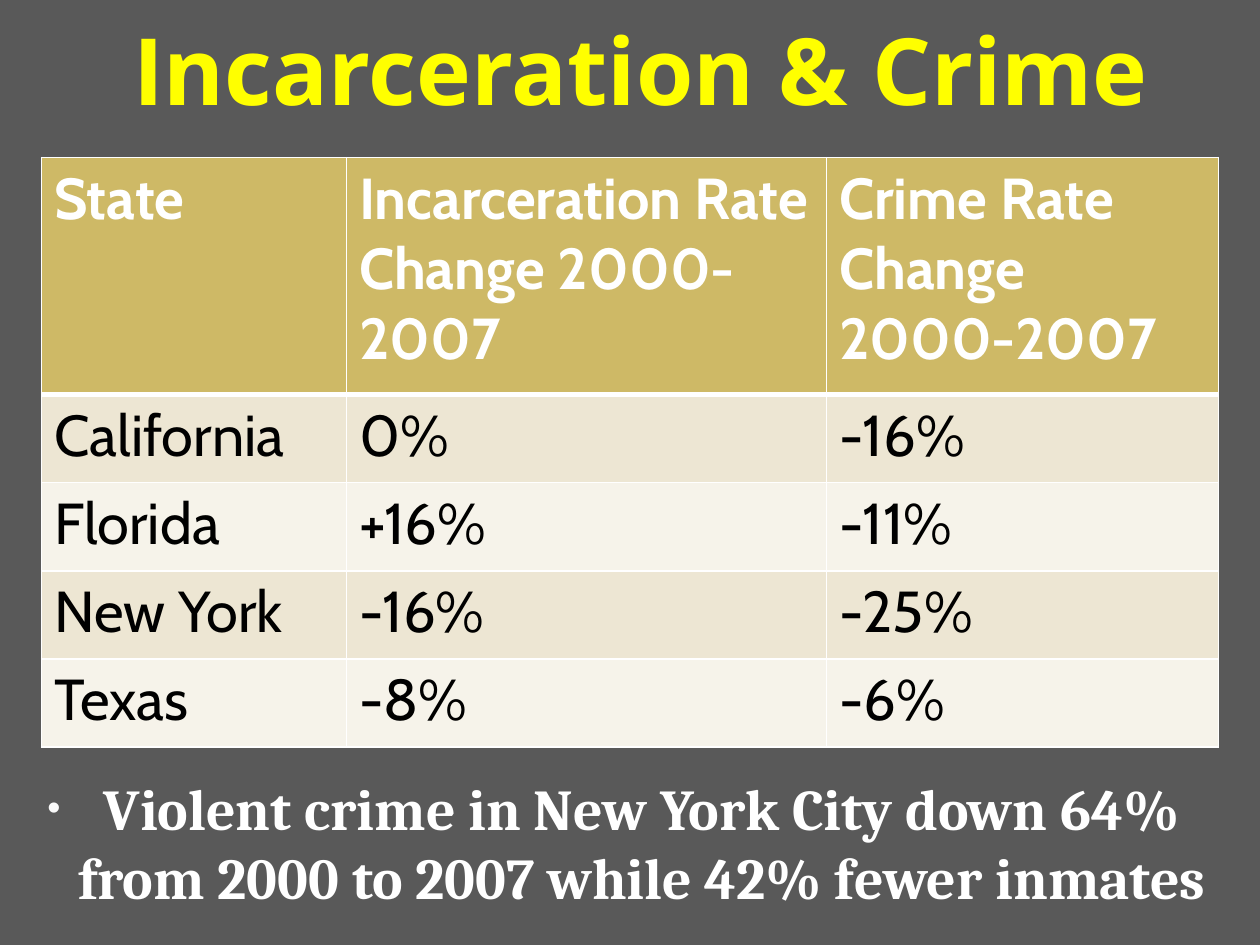
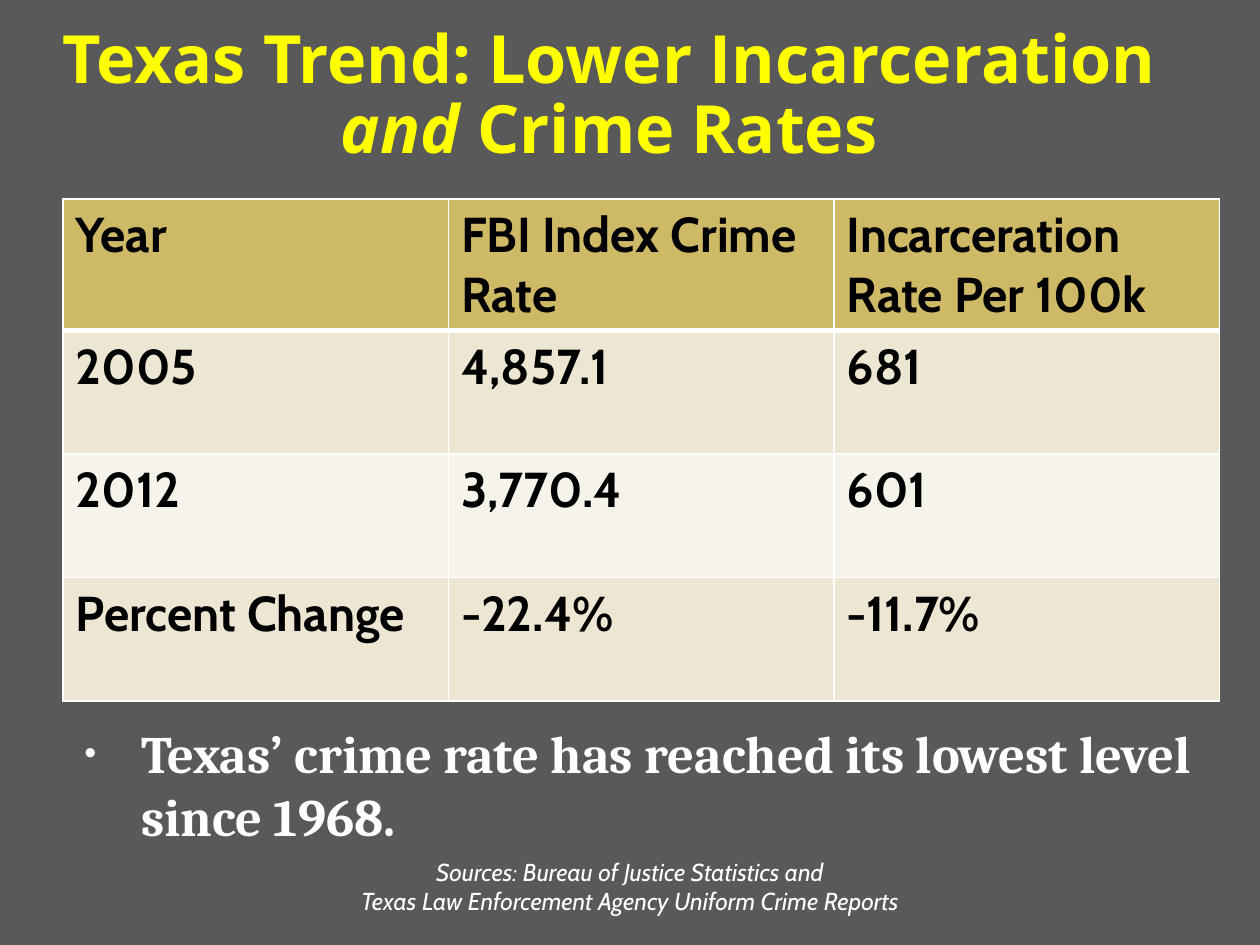
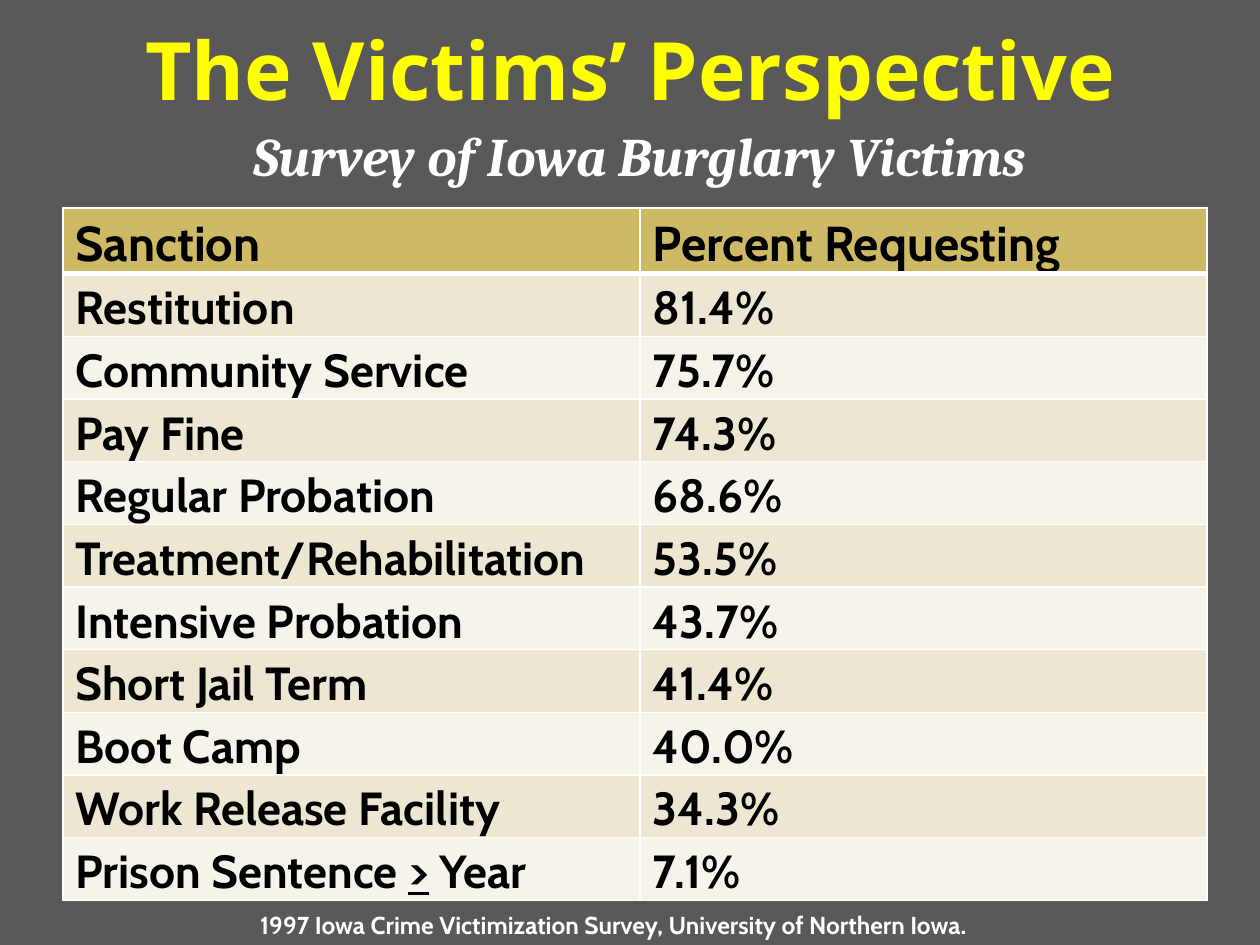
from dataclasses import dataclass

from lxml import etree
from pptx import Presentation
from pptx import util as u
from pptx.dml.color import RGBColor
from pptx.enum import text
from pptx.oxml import ns


@dataclass(frozen=True)
class Theme:
    background: str = "595959"
    title: str = "FFFF00"
    light: str = "FFFFFF"
    dark: str = "000000"
    header: str = "CEB966"
    bands: tuple = ("EDE6D3", "F6F3EA")
    bullet: str = "F9F9F9"
    bullet_percent: int = 65
    title_font: str = "Open Sans"
    body_font: str = "Cambria"
    table_font: str = "Cabin"
    source_size: float = 14
    rule: float = 1
    header_rule: float = 3


THEME = Theme()
WIDTH, HEIGHT = 10, 7.5
HANGING = (0.6, -0.45)

# Boxes are (left, top, width, height) in inches.
# A text is a string or a list of (words, style) with style "", "i" or "u".
SLIDES = [
    {
        "title": {"text": "Incarceration & Crime", "size": 53, "box": (0.5, -0.17, 9.17, 1.42)},
        "body": {
            "text": "Violent crime in New York City down 64% from 2000 to 2007 while 42% fewer inmates",
            "size": 33, "box": (-0.33, 6.08, 10.25, 1.42), "centred": True, "bullet": True,
        },
        "table": {
            "origin": (0.33, 1.25), "columns": (2.42, 3.81, 3.11), "heights": (1.88, 0.7),
            "sizes": (33, 33), "header_colour": THEME.light, "bold_rows": False,
            "rows": [
                ("State", "Incarceration Rate Change 2000-2007", "Crime Rate Change 2000-2007"),
                ("California", "0%", "-16%"),
                ("Florida", "+16%", "-11%"),
                ("New York", "-16%", "-25%"),
                ("Texas", "-8%", "-6%"),
            ],
        },
    },
    {
        "title": {
            "text": [("Texas Trend: Lower Incarceration ", ""), ("and", "i"), (" Crime Rates", "")],
            "size": 38, "box": (0.17, 0.1, 9.33, 1.35), "spacing": 0.87,
        },
        "body": {
            "text": "Texas’ crime rate has reached its lowest level since 1968.",
            "size": 30, "box": (0.42, 5.67, 9.58, 1.72), "bullet": True, "spacing": u.Pt(36),
        },
        "table": {
            "origin": (0.5, 1.58), "columns": (3.06, 3.06, 3.06), "heights": (1.03, 0.98),
            "sizes": (28, 28),
            "rows": [
                ("Year", "FBI Index Crime Rate", "Incarceration Rate Per 100k"),
                ("2005", "4,857.1", "681"),
                ("2012", "3,770.4", "601"),
                ("Percent Change", "-22.4%", "-11.7%"),
            ],
        },
        "source": {
            "lines": ["Sources: Bureau of Justice Statistics and",
                      "Texas Law Enforcement Agency Uniform Crime Reports"],
            "box": (0.5, 6.75, 9, 0.57), "italic": True,
        },
    },
    {
        "title": {"text": "The Victims’ Perspective", "size": 46, "box": (0.5, -0.17, 9, 1.42)},
        "body": {
            "text": "Survey of Iowa Burglary Victims",
            "size": 31, "box": (0, 0.92, 10, 0.62), "centred": True, "italic": True,
        },
        "table": {
            "origin": (0.5, 1.65), "columns": (4.58, 4.5), "heights": (0.51, 0.49),
            "sizes": (28, 26.5), "bottom_margin": 0,
            "rows": [
                ("Sanction", "Percent Requesting"),
                ("Restitution", "81.4%"),
                ("Community Service", "75.7%"),
                ("Pay Fine", "74.3%"),
                ("Regular Probation", "68.6%"),
                ("Treatment/Rehabilitation", "53.5%"),
                ("Intensive Probation", "43.7%"),
                ("Short Jail Term", "41.4%"),
                ("Boot Camp", "40.0%"),
                ("Work Release Facility", "34.3%"),
                ([("Prison Sentence ", ""), (">", "u"), (" Year", "")], "7.1%"),
            ],
        },
        "source": {
            "lines": ["1997 Iowa Crime Victimization Survey, University of Northern Iowa."],
            "box": (0.33, 7.17, 9.08, 0.34), "bold": True,
        },
    },
]


def rgb(colour):
    return RGBColor.from_string(colour)


def inches(box):
    return [u.Inches(length) for length in box]


def place(shape, box):
    shape.left, shape.top, shape.width, shape.height = inches(box)


def write(paragraph, content, family, size, colour, bold=False, italic=False, centred=False):
    pieces = [(content, "")] if isinstance(content, str) else content
    for words, style in pieces:
        run = paragraph.add_run()
        run.text = words
        if style == "i":
            run.font.italic = True
        elif style == "u":
            run.font.underline = True
    font = paragraph.font
    font.name, font.size, font.bold, font.italic = family, u.Pt(size), bold, italic
    font.color.rgb = rgb(colour)
    paragraph.alignment = text.PP_ALIGN.CENTER if centred else text.PP_ALIGN.LEFT


def add_xml(parent, tag, **attributes):
    return etree.SubElement(parent, ns.qn(tag), {k: str(v) for k, v in attributes.items()})


def set_bullet(paragraph, shown):
    """Give the hanging indent, with a small dot or with no mark."""
    properties = paragraph._p.get_or_add_pPr()
    for name, length in zip(("marL", "indent"), HANGING):
        properties.set(name, str(u.Inches(length)))
    if not shown:
        add_xml(properties, "a:buNone")
        return
    add_xml(add_xml(properties, "a:buClr"), "a:srgbClr", val=THEME.bullet)
    add_xml(properties, "a:buSzPct", val=THEME.bullet_percent * 1000)
    add_xml(properties, "a:buFont", typeface="Arial")
    add_xml(properties, "a:buChar", char="•")


def fill_title(title, content):
    place(title, content["box"])
    frame = title.text_frame
    frame.vertical_anchor = text.MSO_ANCHOR.MIDDLE
    frame.auto_size = text.MSO_AUTO_SIZE.NONE
    heading = frame.paragraphs[0]
    write(heading, content["text"], THEME.title_font, content["size"], THEME.title,
          bold=True, centred=True)
    heading.line_spacing = content.get("spacing")


def fill_body(body, content):
    place(body, content["box"])
    body.text_frame.auto_size = text.MSO_AUTO_SIZE.NONE
    point = body.text_frame.paragraphs[0]
    set_bullet(point, content.get("bullet", False))
    write(point, content["text"], THEME.body_font, content["size"], THEME.light, bold=True,
          italic=content.get("italic", False), centred=content.get("centred", False))
    point.line_spacing = content.get("spacing")


def set_borders(cell, bottom, top):
    """Rule all four sides; the lines go ahead of the cell's fill."""
    properties = cell._tc.get_or_add_tcPr()
    widths = {"a:lnL": THEME.rule, "a:lnR": THEME.rule, "a:lnT": top, "a:lnB": bottom}
    for index, (tag, width) in enumerate(widths.items()):
        line = add_xml(properties, tag, w=u.Pt(width))
        add_xml(add_xml(line, "a:solidFill"), "a:srgbClr", val=THEME.light)
        properties.insert(index, line)


def add_rates(slide, content):
    rows, columns = content["rows"], content["columns"]
    header_height, row_height = content["heights"]
    heights = [header_height] + [row_height] * (len(rows) - 1)
    box = (*content["origin"], sum(columns), sum(heights))
    table = slide.shapes.add_table(len(rows), len(columns), *inches(box)).table
    for column, width in zip(table.columns, columns):
        column.width = u.Inches(width)
    for index, (row, height, values) in enumerate(zip(table.rows, heights, rows)):
        row.height = u.Inches(height)
        is_header = index == 0
        for cell, value in zip(row.cells, values):
            cell.margin_bottom = u.Inches(content.get("bottom_margin", 0.05))
            cell.fill.solid()
            cell.fill.fore_color.rgb = rgb(THEME.header if is_header else THEME.bands[(index - 1) % 2])
            set_borders(cell,
                        bottom=THEME.header_rule if is_header else THEME.rule,
                        top=THEME.header_rule if index == 1 else THEME.rule)
            write(cell.text_frame.paragraphs[0], value, THEME.table_font,
                  content["sizes"][0 if is_header else 1],
                  content.get("header_colour", THEME.dark) if is_header else THEME.dark,
                  bold=is_header or content.get("bold_rows", True))


def add_source(slide, content):
    frame = slide.shapes.add_textbox(*inches(content["box"])).text_frame
    frame.word_wrap = True
    frame.auto_size = text.MSO_AUTO_SIZE.SHAPE_TO_FIT_TEXT
    for index, line in enumerate(content["lines"]):
        paragraph = frame.add_paragraph() if index else frame.paragraphs[0]
        write(paragraph, line, THEME.table_font, THEME.source_size, THEME.light, centred=True,
              bold=content.get("bold", False), italic=content.get("italic", False))


def main():
    deck = Presentation()
    deck.slide_width, deck.slide_height = inches((WIDTH, HEIGHT))
    background = deck.slide_master.background.fill
    background.solid()
    background.fore_color.rgb = rgb(THEME.background)
    for content in SLIDES:
        slide = deck.slides.add_slide(deck.slide_layouts.get_by_name("Title and Content"))
        fill_title(slide.shapes.title, content["title"])
        fill_body(slide.placeholders[1], content["body"])
        add_rates(slide, content["table"])
        if "source" in content:
            add_source(slide, content["source"])
    deck.save("out.pptx")


if __name__ == "__main__":
    main()
